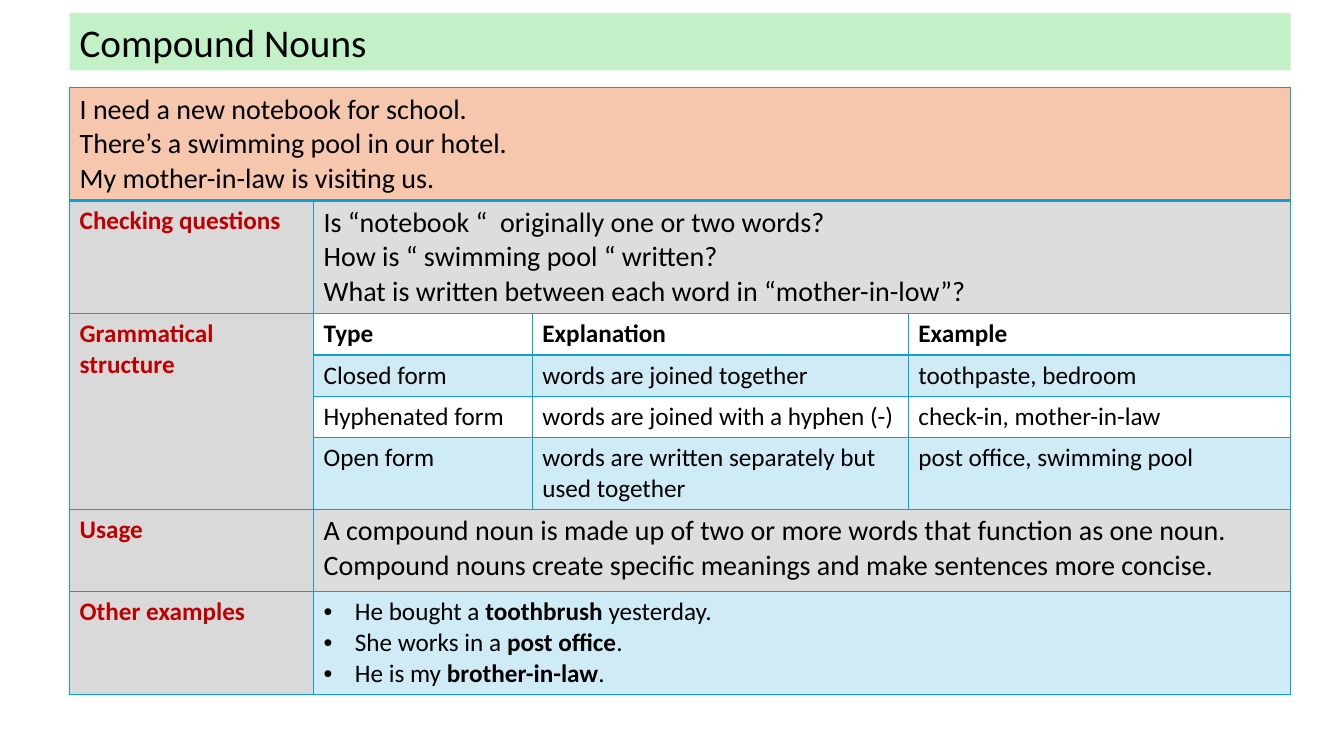
from lxml.etree import SubElement
from pptx import Presentation
from pptx.dml.color import RGBColor
from pptx.enum.shapes import MSO_SHAPE
from pptx.enum.text import MSO_ANCHOR, MSO_AUTO_SIZE, PP_ALIGN
from pptx.oxml import parse_xml
from pptx.oxml.ns import nsdecls, qn
from pptx.util import Inches, Pt

FONT = "Calibri"
BLACK, RED, BLUE = "000000", "C00000", "0F9ED5"
GREEN, PEACH, LIGHT, DARK = "C2F1C8", "F6C6AD", "D9D9D9", "595959"
LEFT, WIDTH = 0.69, 12.11
COLUMNS = [2.42, 2.17, 3.73, 3.79]
ROWS = [1.12, 1.12, 0.41, 0.41, 0.41, 0.71, 0.82, 1.02]

OPENING = [
    "I need a new notebook for school.",
    "There’s a swimming pool in our hotel.",
    "My mother-in-law is visiting us.",
]
QUESTIONS = [
    "Is “notebook “  originally one or two words?",
    "How is “ swimming pool “ written?",
    "What is written between each word in “mother-in-low”?",
]
FORMS = [
    ["Type", "Explanation", "Example"],
    ["Closed form", "words are joined together", "toothpaste, bedroom"],
    ["Hyphenated form", "words are joined with a hyphen (-)", "check-in, mother-in-law"],
    ["Open form", "words are written separately but used together",
     "post office, swimming pool"],
]
USAGE = ("A compound noun is made up of two or more words that function as one noun. "
         "Compound nouns create specific meanings and make sentences more concise.")
# Plain, bold, plain parts of each sentence
EXAMPLES = [
    ("He bought a ", "toothbrush", " yesterday."),
    ("She works in a ", "post office", "."),
    ("He is my ", "brother-in-law", "."),
]
# Row and text of each heading in the first column
HEADINGS = {1: "Checking questions", 2: "Grammatical structure",
            6: "Usage", 7: "Other examples"}


def rgb(value):
    return RGBColor.from_string(value)


def add_span(para, text, size, color=BLACK, bold=False):
    span = para.add_run()
    span.text = text
    span.font.name = FONT
    span.font.size = Pt(size)
    span.font.bold = bold
    span.font.color.rgb = rgb(color)


def next_para(frame, index):
    return frame.paragraphs[0] if index == 0 else frame.add_paragraph()


def write(cell, lines, size, color=BLACK, bold=False):
    for index, line in enumerate(lines):
        add_span(next_para(cell.text_frame, index), line, size, color, bold)


def write_bullets(cell, sentences, size):
    for index, parts in enumerate(sentences):
        para = next_para(cell.text_frame, index)
        properties = para._p.get_or_add_pPr()
        properties.set("marL", str(Inches(0.31)))
        properties.set("indent", str(-Inches(0.31)))
        SubElement(properties, qn("a:buFont")).set("typeface", "Arial")
        SubElement(properties, qn("a:buChar")).set("char", "•")
        for position, part in enumerate(parts):
            add_span(para, part, size, bold=position == 1)


def paint(cell, color, opacity=100):
    cell.fill.solid()
    cell.fill.fore_color.rgb = rgb(color)
    if opacity < 100:
        tint = cell._tc.tcPr.find(qn("a:solidFill"))[0]
        SubElement(tint, qn("a:alpha")).set("val", str(opacity * 1000))


def add_borders(cell, top=1, bottom=1):
    properties = cell._tc.get_or_add_tcPr()
    sides = [("lnL", 1), ("lnR", 1), ("lnT", top), ("lnB", bottom)]
    for index, (side, points) in enumerate(sides):
        properties.insert(index, parse_xml(
            f'<a:{side} {nsdecls("a")} w="{Pt(points)}"><a:solidFill>'
            f'<a:srgbClr val="{BLUE}"/></a:solidFill></a:{side}>'))


def add_title(page, text):
    box = page.shapes.add_shape(MSO_SHAPE.RECTANGLE, Inches(LEFT), Inches(0.13),
                                Inches(WIDTH), Inches(0.57))
    box.shadow.inherit = False
    box.fill.solid()
    box.fill.fore_color.rgb = rgb(GREEN)
    box.line.fill.background()
    frame = box.text_frame
    frame.word_wrap = True
    frame.auto_size = MSO_AUTO_SIZE.SHAPE_TO_FIT_TEXT
    frame.vertical_anchor = MSO_ANCHOR.TOP
    frame.paragraphs[0].alignment = PP_ALIGN.LEFT
    add_span(frame.paragraphs[0], text, 28)


def add_grid(page):
    table = page.shapes.add_table(len(ROWS), len(COLUMNS), Inches(LEFT), Inches(0.87),
                                  Inches(WIDTH), Inches(sum(ROWS))).table
    table.first_row = False
    table.horz_banding = False
    for column, width in zip(table.columns, COLUMNS):
        column.width = Inches(width)
    for row, height in zip(table.rows, ROWS):
        row.height = Inches(height)
    for cell in table.iter_cells():
        cell.fill.background()
    return table


def fill_grid(table):
    # Opening sentences
    opening = table.cell(0, 0)
    opening.merge(table.cell(0, 3))
    opening.vertical_anchor = MSO_ANCHOR.MIDDLE
    write(opening, OPENING, 20)
    paint(opening, PEACH)

    # Headings
    table.cell(2, 0).merge(table.cell(5, 0))
    for row, heading in HEADINGS.items():
        write(table.cell(row, 0), [heading], 18, RED, True)
        paint(table.cell(row, 0), LIGHT)

    # Wide cells beside the headings
    for row, color in [(1, DARK), (6, DARK), (7, BLUE)]:
        table.cell(row, 1).merge(table.cell(row, 3))
        paint(table.cell(row, 1), color, 20)
    write(table.cell(1, 1), QUESTIONS, 20)
    write(table.cell(6, 1), [USAGE], 20)
    write_bullets(table.cell(7, 1), EXAMPLES, 18)

    # Forms, with every second row tinted
    for index, form in enumerate(FORMS):
        for column, text in enumerate(form, start=1):
            cell = table.cell(2 + index, column)
            write(cell, [text], 18, bold=index == 0)
            if index % 2:
                paint(cell, BLUE, 20)

    # Borders, thicker below the opening sentences
    for row in range(len(ROWS)):
        for column in range(len(COLUMNS)):
            add_borders(table.cell(row, column), top=2 if row == 1 else 1,
                        bottom=2 if row == 0 else 1)


def main():
    deck = Presentation()
    deck.slide_width = Inches(13.33)
    deck.slide_height = Inches(7.5)
    page = deck.slides.add_slide(deck.slide_layouts[6])
    fill_grid(add_grid(page))
    add_title(page, "Compound Nouns")
    deck.save("out.pptx")


if __name__ == "__main__":
    main()
